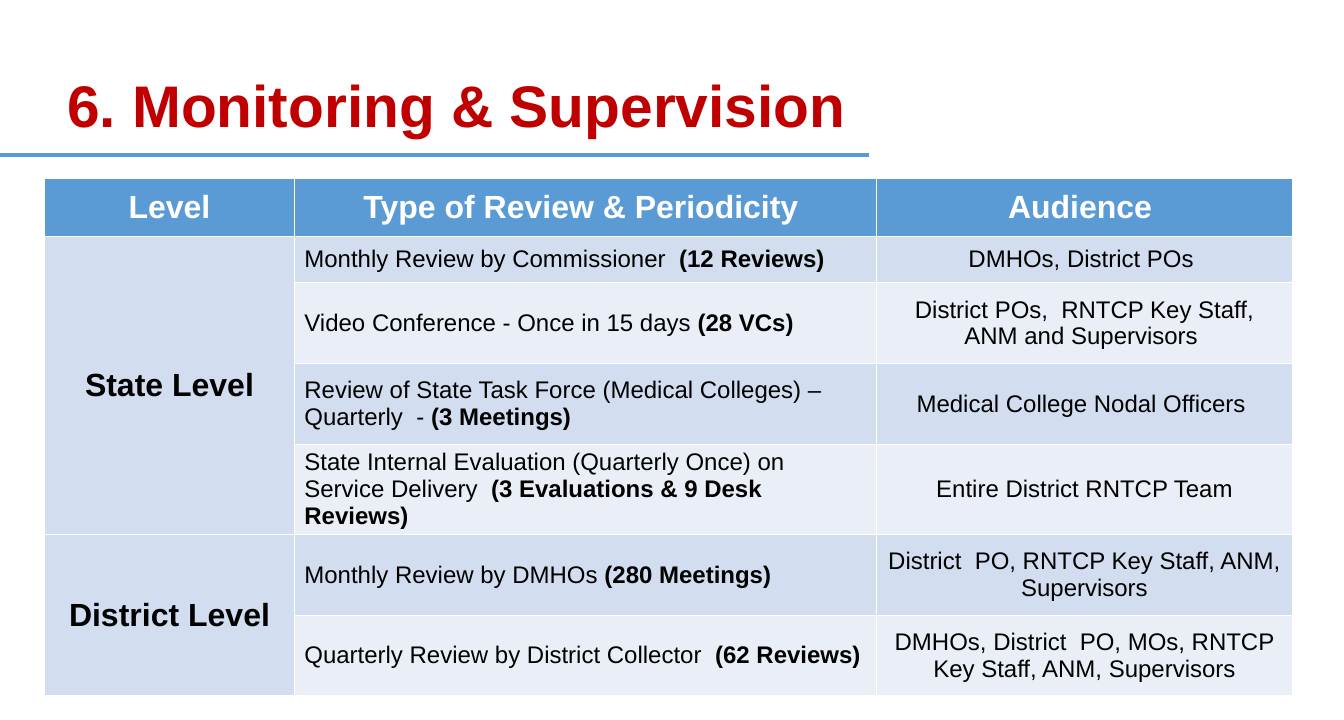
from lxml.etree import SubElement
from pptx import Presentation
from pptx.dml.color import RGBColor
from pptx.enum.shapes import MSO_CONNECTOR
from pptx.enum.text import MSO_ANCHOR, PP_ALIGN
from pptx.oxml.ns import qn
from pptx.util import Pt

FONT = "Arial"
RED = RGBColor(0xC0, 0x00, 0x00)
BLUE = RGBColor(0x5B, 0x9B, 0xD5)
WHITE = RGBColor(0xFF, 0xFF, 0xFF)
BLACK = RGBColor(0x00, 0x00, 0x00)
BANDS = (RGBColor(0xD2, 0xDE, 0xEF), RGBColor(0xEA, 0xEF, 0xF7))

HEADINGS = ("Level", "Type of Review & Periodicity ", "Audience ")
LEVELS = {
    "State Level": (
        ("Monthly Review by Commissioner  ", "(12 Reviews)", "DMHOs, District POs "),
        ("Video Conference - Once in 15 days ", "(28 VCs)",
         "District POs,  RNTCP Key Staff, ANM and Supervisors "),
        ("Review of State Task Force (Medical Colleges) – Quarterly  - ", "(3 Meetings)",
         "Medical College Nodal Officers "),
        ("State Internal Evaluation (Quarterly Once) on Service Delivery  ",
         "(3 Evaluations & 9 Desk Reviews)", "Entire District RNTCP Team"),
    ),
    "District Level": (
        ("Monthly Review by DMHOs ", "(280 Meetings)",
         "District  PO, RNTCP Key Staff, ANM, Supervisors"),
        ("Quarterly Review by District Collector  ", "(62 Reviews)",
         "DMHOs, District  PO, MOs, RNTCP Key Staff, ANM, Supervisors"),
    ),
}
COLUMN_WIDTHS = (188, 436, 312.5)
ROW_HEIGHTS = (43.2, 35, *[60.5] * 5)


def style_font(font, size, color, bold=None):
    """Apply the slide's typeface with a size, colour and weight."""
    font.name, font.size, font.bold = FONT, Pt(size), bold
    font.color.rgb = color


def add_heading(slide, left, top, width, height):
    """Place the title, and the rule that runs below it from the slide edge."""
    title = slide.shapes.title
    title.left, title.top, title.width, title.height = map(Pt, (left, top, width, height))
    title.text_frame.text = "6. Monitoring & Supervision"
    title.text_frame.vertical_anchor = MSO_ANCHOR.MIDDLE
    heading = title.text_frame.paragraphs[0]
    heading.alignment = PP_ALIGN.LEFT
    style_font(heading.font, 44, RED, True)

    rule_top = Pt(top + height + 8.6)
    rule = slide.shapes.add_connector(MSO_CONNECTOR.STRAIGHT, 0, rule_top, Pt(652), rule_top)
    rule.line.color.rgb = BLUE
    rule.line.width = Pt(3)
    SubElement(rule._element.spPr, qn("a:effectLst"))


def fill_cell(cell, fill, texts, size=18, color=BLACK, bold=None, align=PP_ALIGN.CENTER):
    """Write one cell; any text after the first is bold."""
    cell.fill.solid()
    cell.fill.fore_color.rgb = fill
    cell.vertical_anchor = MSO_ANCHOR.MIDDLE
    paragraph = cell.text_frame.paragraphs[0]
    paragraph.alignment = align
    style_font(paragraph.font, size, color, bold)
    for position, text in enumerate(texts):
        run = paragraph.add_run()
        run.text = text
        style_font(run.font, size, color, bold or position > 0)


def add_review_table(slide, left, top):
    """Place the table of reviews, grouped by level."""
    reviews = slide.shapes.add_table(
        len(ROW_HEIGHTS), len(COLUMN_WIDTHS), Pt(left), Pt(top),
        Pt(sum(COLUMN_WIDTHS)), Pt(sum(ROW_HEIGHTS))).table
    for column, width in zip(reviews.columns, COLUMN_WIDTHS):
        column.width = Pt(width)
    for row, height in zip(reviews.rows, ROW_HEIGHTS):
        row.height = Pt(height)

    for column, heading in enumerate(HEADINGS):
        fill_cell(reviews.cell(0, column), BLUE, [heading], 24, WHITE, True)

    first = 1
    for level, entries in LEVELS.items():
        level_cell = reviews.cell(first, 0)
        level_cell.merge(reviews.cell(first + len(entries) - 1, 0))
        fill_cell(level_cell, BANDS[0], [level], 24, bold=True)
        for row, (review, count, audience) in enumerate(entries, first):
            band = BANDS[(row - 1) % 2]
            fill_cell(reviews.cell(row, 1), band, [review, count], align=PP_ALIGN.LEFT)
            fill_cell(reviews.cell(row, 2), band, [audience])
        first += len(entries)


def main():
    """Build and save the slide."""
    deck = Presentation()
    deck.slide_width, deck.slide_height = Pt(1008), Pt(540)
    slide = deck.slides.add_slide(deck.slide_layouts[5])
    add_heading(slide, 43.2, 47.5, 788.4, 60.5)
    add_review_table(slide, 33.1, 134)
    deck.save("out.pptx")


if __name__ == "__main__":
    main()
